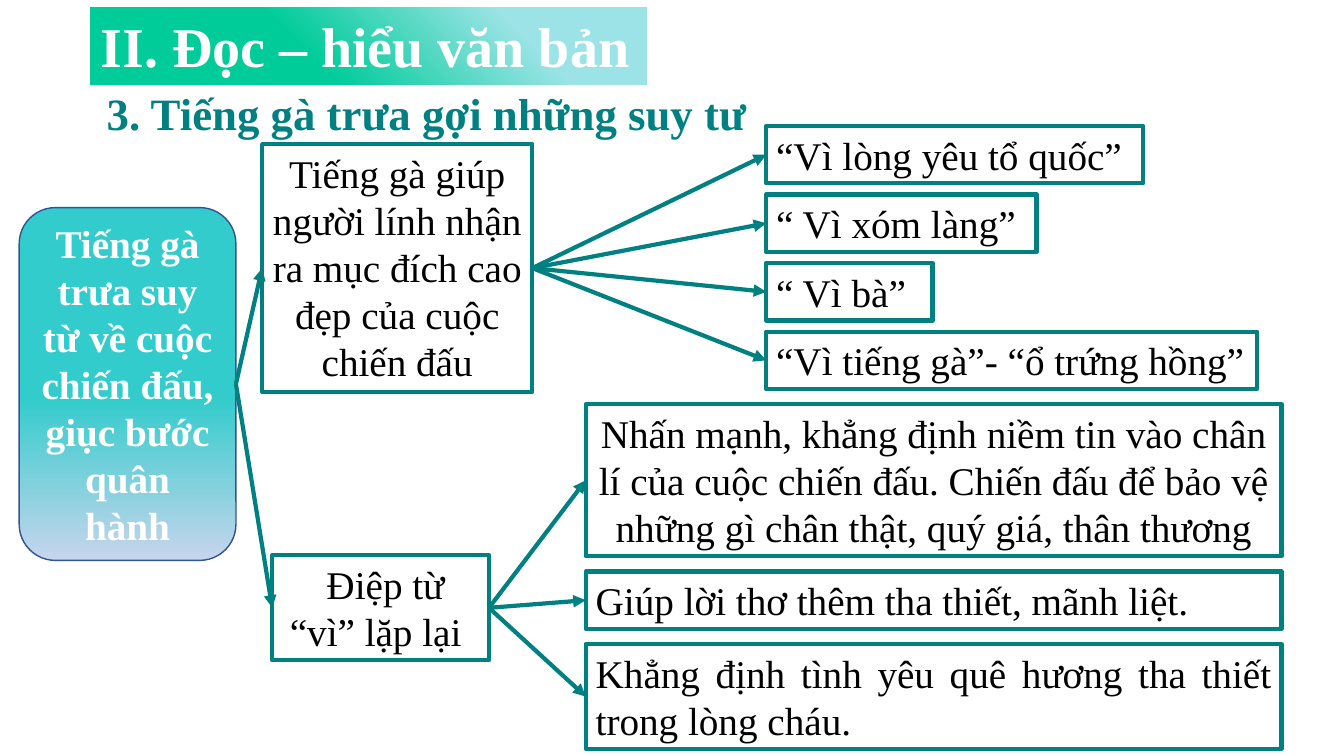
from collections import namedtuple

from lxml.etree import SubElement
from pptx import Presentation
from pptx.dml.color import RGBColor
from pptx.enum.shapes import MSO_CONNECTOR, MSO_SHAPE
from pptx.enum.text import MSO_ANCHOR, PP_ALIGN
from pptx.oxml.ns import qn
from pptx.util import Inches, Pt

COLORS = {
    "teal": "008080",
    "black": "000000",
    "white": "FFFFFF",
    "banner_light": "9BE3E6",
    "banner_green": "00CC99",
    "root_top": "33CCCC",
    "root_bottom": "C7D5ED",
    "root_edge": "325491",
}
FONT = "Times New Roman"
CELL = Inches(0.1)  # side of one grid cell; the slide is 133.3 columns by 75 rows
LEFT_SITE, RIGHT_SITE = 1, 3

Box = namedtuple("Box", "column row columns rows")
Leaf = namedtuple("Leaf", "text columns rows align", defaults=[PP_ALIGN.JUSTIFY])


def color(name):
    return RGBColor.from_string(COLORS[name])


def within(box, column, row, columns, rows):
    """Return a box whose corner is counted from the corner of another box."""
    return Box(box.column + column, box.row + row, columns, rows)


def emu(box):
    return [round(length * CELL) for length in box]


def write(shape, text, size, ink, bold=False, align=PP_ALIGN.LEFT, anchor=MSO_ANCHOR.TOP):
    frame = shape.text_frame
    frame.word_wrap = True
    frame.vertical_anchor = anchor
    paragraph = frame.paragraphs[0]
    paragraph.text = text
    paragraph.alignment = align
    font = paragraph.font
    font.name, font.size, font.bold = FONT, Pt(size), bold
    font.color.rgb = color(ink)
    return paragraph


def add_block(slide, box, preset=MSO_SHAPE.RECTANGLE):
    block = slide.shapes.add_shape(preset, *emu(box))
    block.shadow.inherit = False
    return block


def outline(line, ink, width):
    line.color.rgb = color(ink)
    line.width = Pt(width)


def fill_gradient(shape, angle, *stops):
    shape.fill.gradient()
    shape.fill.gradient_angle = angle
    for stop, (position, name) in zip(shape.fill.gradient_stops, stops):
        stop.position = position
        stop.color.rgb = color(name)


def add_framed(slide, box, text, align):
    framed = add_block(slide, box)
    framed.fill.background()
    outline(framed.line, "teal", 3)
    write(framed, text, 28, "black", align=align)
    return framed


def add_arrow(slide, source, target):
    arrow = slide.shapes.add_connector(MSO_CONNECTOR.STRAIGHT, 0, 0, 0, 0)
    arrow.begin_connect(source, RIGHT_SITE)
    arrow.end_connect(target, LEFT_SITE)
    outline(arrow.line, "teal", 3)
    SubElement(arrow.line._get_or_add_ln(), qn("a:tailEnd"), type="triangle")
    SubElement(arrow._element.spPr, qn("a:effectLst"))


def add_header(slide, box):
    banner = add_block(slide, within(box, 0, 0, 55.2, 7.7))
    fill_gradient(banner, 225, (0.24, "banner_light"), (0.61, "banner_green"))
    banner.line.fill.background()
    write(banner, "II. Đọc – hiểu văn bản", 40, "white", bold=True)

    heading = slide.shapes.add_textbox(*emu(within(box, 0.6, 6.5, 115.8, 6.7)))
    paragraph = write(heading, "3. Tiếng gà trưa gợi những suy tư", 32, "teal", bold=True)
    paragraph.line_spacing = 1.15
    paragraph.space_after = Pt(10)


def add_root(slide, box):
    root = add_block(slide, box, MSO_SHAPE.ROUNDED_RECTANGLE)
    fill_gradient(root, 270, (0.54, "root_top"), (1, "root_bottom"))
    outline(root.line, "root_edge", 1)
    write(root, "Tiếng gà trưa suy từ về cuộc chiến đấu, giục bước quân hành", 28,
          "white", bold=True, align=PP_ALIGN.CENTER, anchor=MSO_ANCHOR.MIDDLE)
    return root


def add_branch(slide, box, root, stem_text, stem_cells, leaf_column, gap, leaves):
    """Link the root to a stem, and the stem to leaves stacked at an equal gap."""
    stem = add_framed(slide, within(box, *stem_cells), stem_text, PP_ALIGN.CENTER)
    add_arrow(slide, root, stem)
    row = 0
    for leaf in leaves:
        leaf_box = within(box, leaf_column, row, leaf.columns, leaf.rows)
        add_arrow(slide, stem, add_framed(slide, leaf_box, leaf.text, leaf.align))
        row += leaf.rows + gap


def main():
    deck = Presentation()
    deck.slide_width, deck.slide_height = Inches(13.33), Inches(7.5)
    slide = deck.slides.add_slide(deck.slide_layouts[6])

    add_header(slide, Box(9, 0.7, 116.4, 13.2))
    root = add_root(slide, Box(1.9, 20.6, 21.5, 35))
    add_branch(
        slide, Box(26, 12.5, 98.7, 26.4), root,
        "Tiếng gà giúp người lính nhận ra mục đích cao đẹp của cuộc chiến đấu",
        stem_cells=(0, 1.8, 26.8, 24.6), leaf_column=50, gap=1.1,
        leaves=[
            Leaf("“Vì lòng yêu tổ quốc”", 37.4, 5.7),
            Leaf("“ Vì xóm làng”", 26.8, 5.7),
            Leaf("“ Vì bà”", 16.5, 5.7),
            Leaf("“Vì tiếng gà”- “ổ trứng hồng”", 48.7, 5.7),
        ],
    )
    add_branch(
        slide, Box(27, 40.1, 100.1, 34.2), root,
        " Điệp từ “vì” lặp lại ",
        stem_cells=(0, 15, 21.5, 10.4), leaf_column=31.1, gap=1.5,
        leaves=[
            Leaf("Nhấn mạnh, khẳng định niềm tin vào chân lí của cuộc chiến đấu. "
                 "Chiến đấu để bảo vệ những gì chân thật, quý giá, thân thương",
                 69, 15.1, PP_ALIGN.CENTER),
            Leaf("Giúp lời thơ thêm tha thiết, mãnh liệt.", 69, 5.7),
            Leaf("Khẳng định tình yêu quê hương tha thiết trong lòng cháu.", 69, 10.4),
        ],
    )
    deck.save("out.pptx")


if __name__ == "__main__":
    main()
